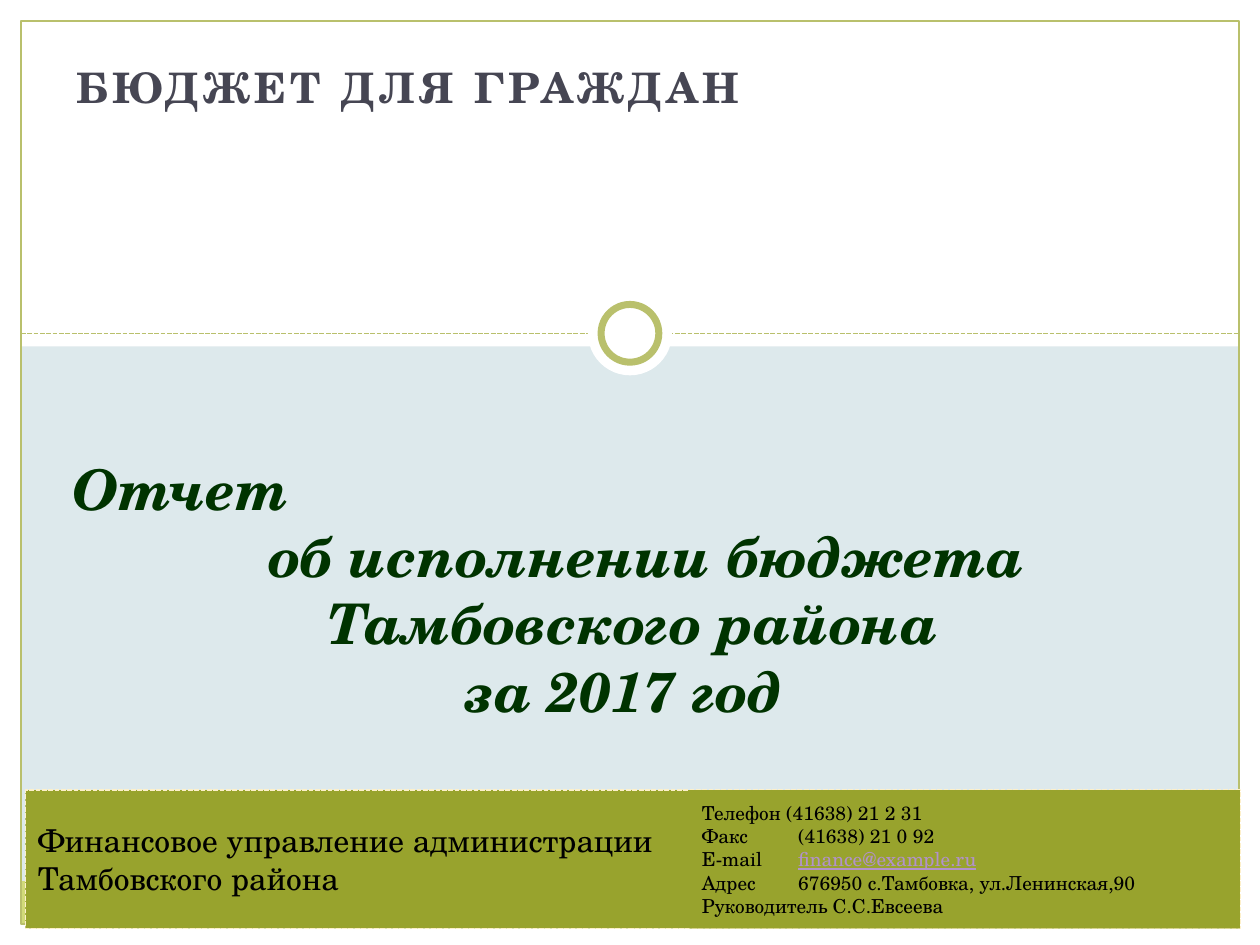
from lxml import etree
from pptx import Presentation
from pptx.dml.color import RGBColor
from pptx.enum.dml import MSO_LINE
from pptx.enum.shapes import MSO_CONNECTOR, MSO_SHAPE
from pptx.enum.text import MSO_ANCHOR, MSO_AUTO_SIZE, PP_ALIGN
from pptx.oxml.ns import qn
from pptx.util import Pt

COLORS = {
    "background": "DDE9EC", "white": "FFFFFF", "lime": "D2DA7A",
    "frame": "B9C06C", "olive": "98A32D", "cream": "FDF0CA",
    "slate": "464653", "green": "003300", "black": "000000", "link": "B292CA",
}
FONT = "TeX Gyre Schola"


def add_block(preset, box, fill=None, line=None, width=0.75):
    block = slide.shapes.add_shape(preset, *[Pt(v) for v in box])
    block.shadow.inherit = False
    if fill:
        block.fill.solid()
        block.fill.fore_color.rgb = RGBColor.from_string(COLORS[fill])
    else:
        block.fill.background()
    if line:
        block.line.color.rgb = RGBColor.from_string(COLORS[line])
        block.line.width = Pt(width)
    else:
        block.line.fill.background()
    return block


def add_text(paragraph, text, size, color, bold=False, italic=False):
    run = paragraph.add_run()
    run.text = text
    run.font.name = FONT
    run.font.size = Pt(size)
    run.font.bold = bold
    run.font.italic = italic
    run.font.color.rgb = RGBColor.from_string(COLORS[color])
    return run


prs = Presentation()
prs.slide_width, prs.slide_height = Pt(720), Pt(540)
slide = prs.slides.add_slide(prs.slide_layouts[0])
slide.background.fill.solid()
slide.background.fill.fore_color.rgb = RGBColor.from_string(COLORS["background"])

for box, fill in [
    ((0, 528, 720, 12), "white"),
    ((708, 0, 12, 540), "white"),
    ((0, 0, 12, 540), "white"),
    ((0, 0, 720, 198), "white"),
    ((12, 503.5, 696, 24.5), "lime"),
]:
    add_block(MSO_SHAPE.RECTANGLE, box, fill)

divider = slide.shapes.add_connector(
    MSO_CONNECTOR.STRAIGHT, Pt(12), Pt(190.5), Pt(708), Pt(190.5))
divider.line.color.rgb = RGBColor.from_string(COLORS["frame"])
divider.line.width = Pt(0.9)
divider.line.dash_style = MSO_LINE.SQUARE_DOT
etree.SubElement(divider._element.spPr, qn("a:effectLst"))

add_block(MSO_SHAPE.RECTANGLE, (12, 12, 696, 516), line="frame")
add_block(MSO_SHAPE.OVAL, (336, 166.5, 48, 48), "white")
add_block(MSO_SHAPE.OVAL, (343.5, 174, 33, 33), "white", "frame", 4)

report, heading = slide.placeholders
for holder, box, anchor in [
    (heading, (36.5, 31.5, 510.5, 138), MSO_ANCHOR.TOP),
    (report, (34, 168, 655, 249), MSO_ANCHOR.BOTTOM),
]:
    slide.shapes._spTree.append(holder._element)
    holder.left, holder.top, holder.width, holder.height = [Pt(v) for v in box]
    holder.text_frame.word_wrap = True
    holder.text_frame.auto_size = MSO_AUTO_SIZE.NONE
    holder.text_frame.vertical_anchor = anchor

heading_line = heading.text_frame.paragraphs[0]
heading_line.alignment = PP_ALIGN.LEFT
heading_run = add_text(heading_line, "БЮДЖЕТ ДЛЯ ГРАЖДАН", 24, "slate", bold=True)
heading_run.font._element.set("spc", "250")

for i, (text, align, indent) in enumerate([
    ("Отчет", PP_ALIGN.LEFT, 0),
    ("об исполнении бюджета", PP_ALIGN.CENTER, 16),
    ("Тамбовского района", PP_ALIGN.CENTER, 0),
    ("за 2017 год ", PP_ALIGN.CENTER, 0),
]):
    frame = report.text_frame
    report_line = frame.add_paragraph() if i else frame.paragraphs[0]
    report_line.alignment = align
    report_line._p.get_or_add_pPr().set("marL", str(Pt(indent)))
    add_text(report_line, text, 32, "green", bold=True, italic=True)

office = add_block(MSO_SHAPE.RECTANGLE, (14.5, 451.5, 694, 79), "olive", "cream", 0.9)
office.line.dash_style = MSO_LINE.SQUARE_DOT
contacts = add_block(MSO_SHAPE.RECTANGLE, (394, 451.5, 314.5, 79), "olive")

for block, size, lines in [
    (office, 18, [["Финансовое управление администрации"], ["Тамбовского района"]]),
    (contacts, 11, [
        ["Телефон (41638) 21 2 31"],
        ["Факс\t(41638) 21 0 92"],
        ["E-mail\t", "finance@example.ru"],
        ["Адрес\t676950 c.Тамбовка, ул.Ленинская,90"],
        ["Руководитель С.С.Евсеева"],
    ]),
]:
    frame = block.text_frame
    frame.word_wrap = True
    frame.vertical_anchor = MSO_ANCHOR.MIDDLE
    for i, texts in enumerate(lines):
        line = frame.add_paragraph() if i else frame.paragraphs[0]
        line.alignment = PP_ALIGN.LEFT
        if "\t" in texts[0]:
            tabs = etree.SubElement(line._p.get_or_add_pPr(), qn("a:tabLst"))
            etree.SubElement(tabs, qn("a:tab"), pos=str(Pt(55)), algn="l")
        for text in texts:
            is_email = "@" in text
            run = add_text(line, text, size, "link" if is_email else "black")
            run.font.underline = is_email

prs.save("out.pptx")
